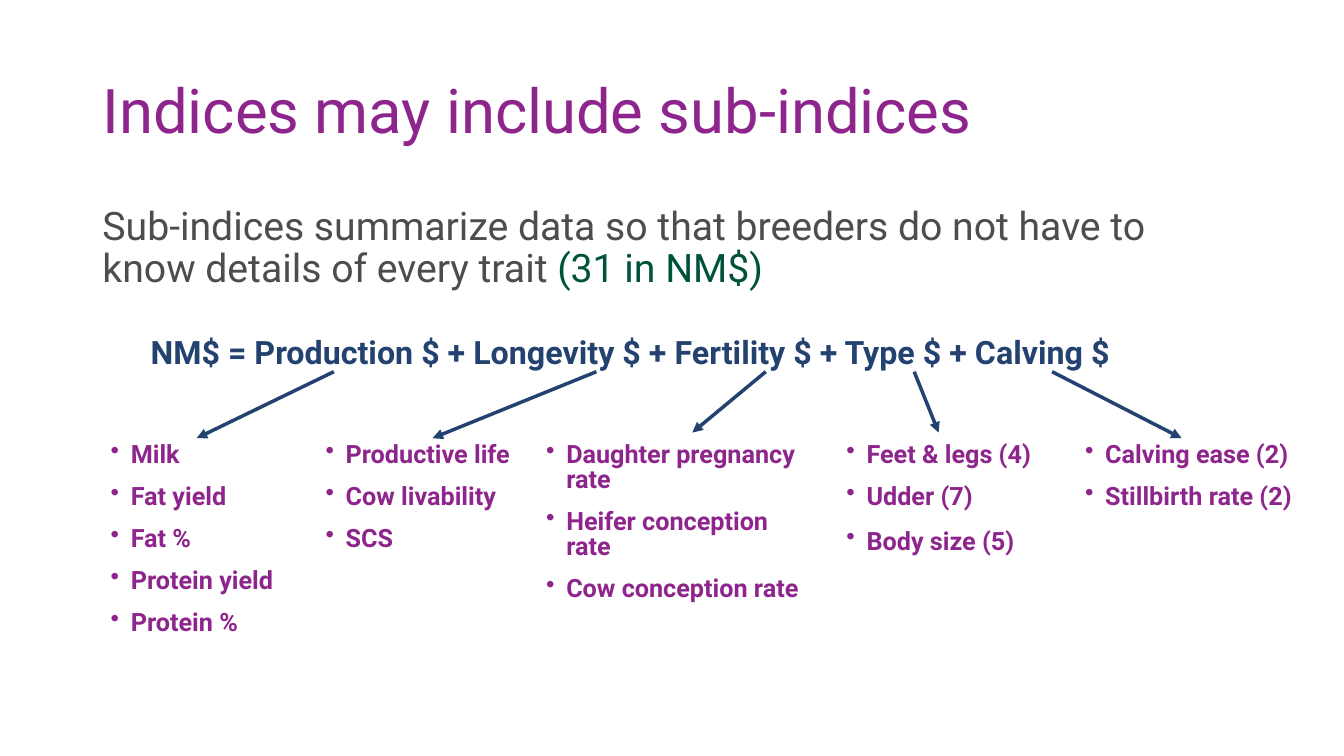
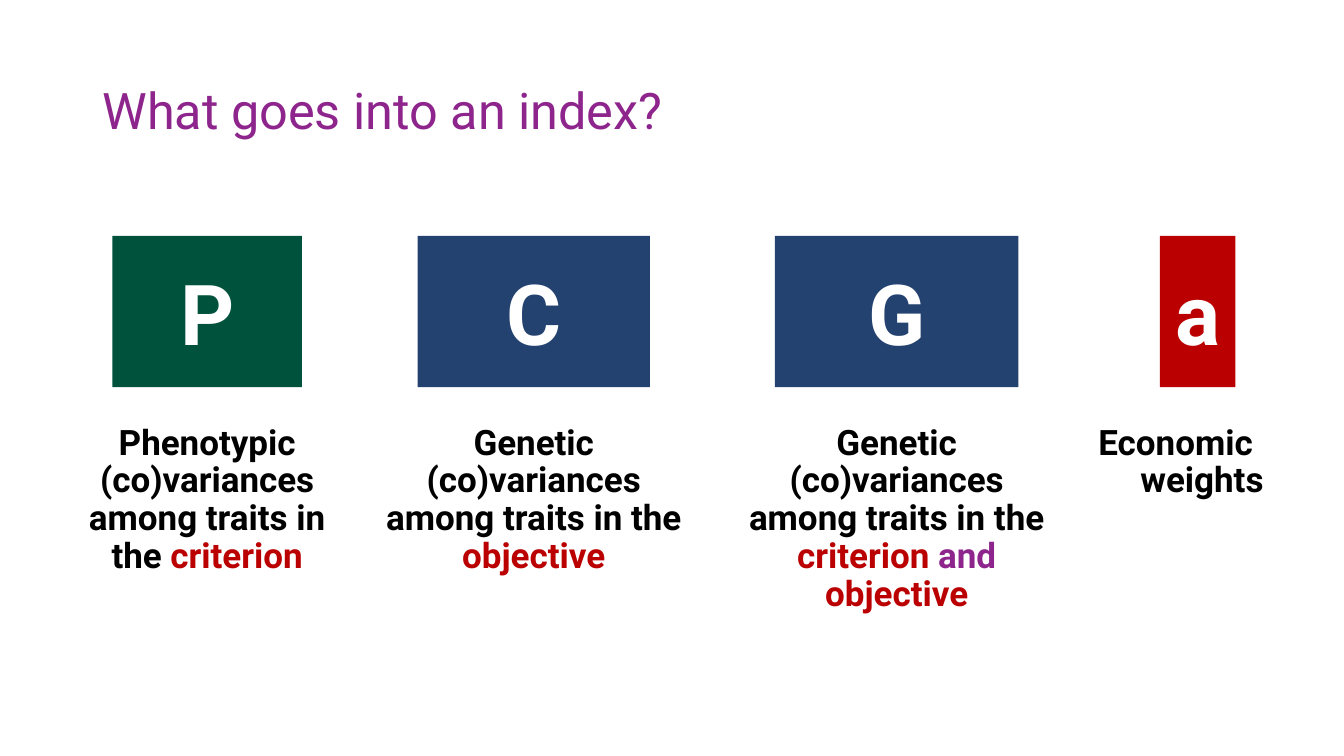
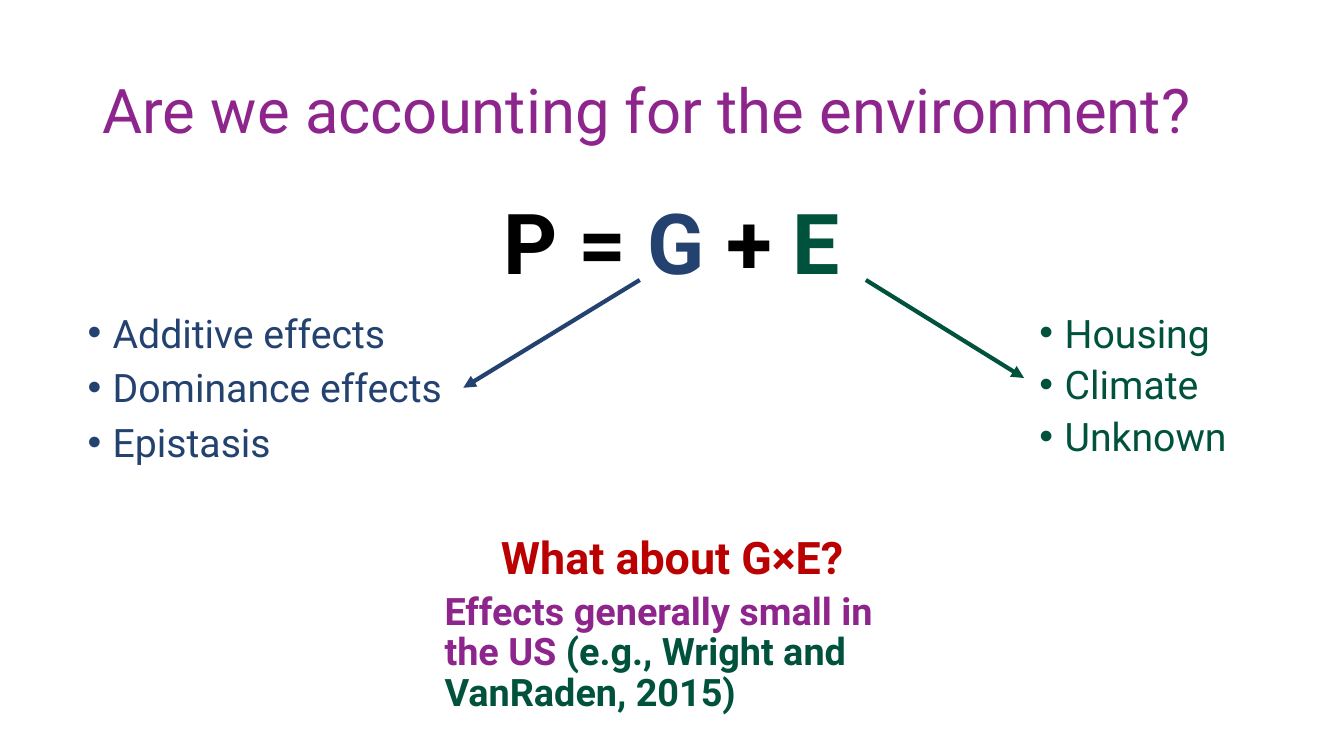
from lxml import etree
from pptx import Presentation
from pptx.dml.color import RGBColor
from pptx.enum import shapes, text
from pptx.oxml import ns
from pptx.util import Pt

# Shared look
FONT = "Roboto"
PURPLE = RGBColor(0x8E, 0x25, 0x8D)
GREY = RGBColor(0x4D, 0x4D, 0x4D)
GREEN = RGBColor(0x00, 0x52, 0x3C)
NAVY = RGBColor(0x24, 0x42, 0x70)
RED = RGBColor(0xBA, 0x00, 0x00)
BLACK = RGBColor(0, 0, 0)
WHITE = RGBColor(0xFF, 0xFF, 0xFF)
LEFT, CENTER = text.PP_ALIGN.LEFT, text.PP_ALIGN.CENTER
MARGIN, CONTENT_WIDTH = 66, 828
TITLE_ONLY, TITLE_BODY, TITLE_TWO = 5, 1, 3


def place(part, box):
    part.left, part.top, part.width, part.height = map(Pt, box)


def set_frame(frame, insets=(7.2, 3.6), anchor=text.MSO_ANCHOR.TOP):
    """Wrap the text and set its side and top insets."""
    side, top = map(Pt, insets)
    frame.word_wrap = True
    frame.auto_size = text.MSO_AUTO_SIZE.NONE
    frame.vertical_anchor = anchor
    frame.margin_left = frame.margin_right = side
    frame.margin_top = frame.margin_bottom = top
    return frame


def text_box(parent, box, **frame_style):
    return set_frame(parent.shapes.add_textbox(*map(Pt, box)).text_frame, **frame_style)


def add_paragraph(frame, runs, size, bold=False, align=LEFT, leading=1.0,
                  before=0, after=0, hanging=0, bullet=False):
    """Add (words, colour) runs; leading is a factor or a number of points."""
    first = frame.paragraphs[0]
    paragraph = frame.add_paragraph() if first.runs else first
    properties = paragraph._p.get_or_add_pPr()
    properties.set("marL", str(Pt(hanging)))
    properties.set("indent", str(-Pt(hanging)))
    mark = etree.SubElement(properties, ns.qn("a:buChar" if bullet else "a:buNone"))
    if bullet:
        mark.set("char", "•")
    paragraph.alignment = align
    paragraph.line_spacing = leading if leading < 2 else Pt(leading)
    paragraph.space_before, paragraph.space_after = Pt(before), Pt(after)
    for words, colour in runs:
        run = paragraph.add_run()
        run.text = words
        run.font.name, run.font.size, run.font.bold = FONT, Pt(size), bold
        run.font.color.rgb = colour


def bullet_list(frame, items, colour, size, leadings, gap_before=0, gap_after=0,
                hanging=18, bold=False):
    for position, (item, leading) in enumerate(zip(items, leadings)):
        add_paragraph(frame, [(item, colour)], size, bold, leading=leading,
                      before=gap_before if position else 0, after=gap_after,
                      hanging=hanging, bullet=True)


def add_arrow(slide, start, end, colour, weight):
    arrow = slide.shapes.add_connector(
        shapes.MSO_CONNECTOR.STRAIGHT, *map(Pt, (*start, *end)))
    arrow.line.color.rgb, arrow.line.width = colour, Pt(weight)
    etree.SubElement(arrow.line._get_or_add_ln(), ns.qn("a:tailEnd"), type="triangle")
    etree.SubElement(arrow._element.spPr, ns.qn("a:effectLst"))


def titled_slide(deck, layout, heading, size=44, width=CONTENT_WIDTH):
    slide = deck.slides.add_slide(deck.slide_layouts[layout])
    title = slide.shapes.title
    place(title, (MARGIN, 29, width, 104))
    frame = set_frame(title.text_frame, anchor=text.MSO_ANCHOR.MIDDLE)
    add_paragraph(frame, [(heading, PURPLE)], size, leading=0.9)
    return slide


# Slide 1: the formula and the traits behind each term
def trait_column(slide, left, width, traits, last_leading):
    frame = text_box(slide, (left, 313, width, 30 * len(traits)))
    leadings = [18] * (len(traits) - 1) + [last_leading]
    bullet_list(frame, traits, PURPLE, 18, leadings, gap_after=12,
                hanging=14.4, bold=True)


def sub_indices_slide(deck):
    slide = titled_slide(deck, TITLE_BODY, "Indices may include sub-indices")
    summary = slide.placeholders[1]
    place(summary, (MARGIN, 144, CONTENT_WIDTH, 342))
    add_paragraph(set_frame(summary.text_frame), [
        ("Sub-indices summarize data so that breeders do not have to "
         "know details of every trait ", GREY),
        ("(31 in NM$)", GREEN)], 28, leading=0.9)

    formula = text_box(slide, (72, 234, 757.5, 35))
    add_paragraph(formula, [("NM$ = Production $ + Longevity $ + Fertility $ + "
                             "Type $ + Calving $", NAVY)], 23, True, CENTER)

    # Column left and width, arrow start x, arrow end, traits, last leading
    columns = [
        (72, 136, 238.5, (140.5, 313),
         ["Milk", "Fat yield", "Fat %", "Protein yield", "Protein %"], 18),
        (225.5, 165.5, 426, (309, 313),
         ["Productive life", "Cow livability", "SCS"], 18),
        (383, 198, 547, (494.5, 309),
         ["Daughter pregnancy rate", "Heifer conception rate",
          "Cow conception rate"], 18),
        (597.5, 160.5, 653, (670.5, 309),
         ["Feet & legs (4)", "Udder (7)", "Body size (5)"], 20),
        (768, 172, 751.5, (844, 313),
         ["Calving ease (2)", "Stillbirth rate (2)"], 18),
    ]
    for left, width, start, end, traits, last_leading in columns:
        trait_column(slide, left, width, traits, last_leading)
        add_arrow(slide, (start, 265.5), end, NAVY, 2.5)


# Slide 2: one block and caption for each ingredient
def ingredient(slide, left, width, block_width, letter, colour, caption, **style):
    group = slide.shapes.add_group_shape()
    block_left = left + (width - block_width) / 2
    block = group.shapes.add_shape(
        shapes.MSO_SHAPE.RECTANGLE, *map(Pt, (block_left, 168.5, block_width, 108)))
    block.shadow.inherit = False
    block.fill.solid()
    block.fill.fore_color.rgb = colour
    block.line.fill.background()
    frame = set_frame(block.text_frame, (0, 0), text.MSO_ANCHOR.MIDDLE)
    add_paragraph(frame, [(letter, WHITE)], 60, True, CENTER)
    add_paragraph(text_box(group, (left, 299.5, width, 144)), caption, 25, True,
                  leading=27, **style)


def ingredients_slide(deck):
    slide = titled_slide(deck, TITLE_ONLY, "What goes into an index?", 36)
    genetic = ("Genetic (co)variances among traits in the ", BLACK)
    ingredient(slide, 48, 200, 135.5, "P", GREEN,
               [("Phenotypic (co)variances among traits in the ", BLACK),
                ("criterion", RED)], align=CENTER)
    ingredient(slide, 258.5, 245.5, 166, "C", NAVY,
               [genetic, ("objective", RED)], align=CENTER)
    ingredient(slide, 516, 249, 174, "G", NAVY,
               [genetic, ("criterion ", RED), ("and ", PURPLE), ("objective", RED)],
               align=CENTER)
    ingredient(slide, 777.5, 156, 54, "a", RED,
               [("Economic weights", BLACK)], hanging=30)


# Slide 3: phenotype split into genetics and environment
def effects_list(placeholder, box, effects, colour, leadings):
    place(placeholder, box)
    frame = set_frame(placeholder.text_frame, (18, 7.2))
    bullet_list(frame, effects, colour, 28, leadings, gap_before=10)


def environment_slide(deck):
    slide = titled_slide(deck, TITLE_TWO, "Are we accounting for the environment?",
                         width=848)
    effects_list(slide.placeholders[1], (44.5, 218, 305, 117.5),
                 ["Additive effects", "Dominance effects", "Epistasis"],
                 NAVY, [29, 29, 29])
    effects_list(slide.placeholders[2], (724.5, 218, 189.5, 129.5),
                 ["Housing", "Climate", "Unknown"], GREEN, [29, 27, 27])

    equation = text_box(slide, (309, 132.5, 342, 67.5))
    add_paragraph(equation, [("P = ", BLACK), ("G", NAVY), (" + ", BLACK),
                             ("E", GREEN)], 60, True, CENTER)
    add_arrow(slide, (457, 200), (331, 277), NAVY, 3)
    add_arrow(slide, (618.5, 200), (731.5, 270), GREEN, 3)

    interaction = text_box(slide, (317.5, 388, 325.5, 123), insets=(0, 0))
    add_paragraph(interaction, [("What about G×E?", RED)], 32, True, CENTER,
                  leading=29, after=6)
    add_paragraph(interaction, [("Effects generally small in the US ", PURPLE),
                                ("(e.g., Wright and VanRaden, 2015)", GREEN)],
                  27, True, leading=29)


def main():
    deck = Presentation()
    deck.slide_width, deck.slide_height = Pt(960), Pt(540)
    sub_indices_slide(deck)
    ingredients_slide(deck)
    environment_slide(deck)
    deck.save("out.pptx")


if __name__ == "__main__":
    main()
